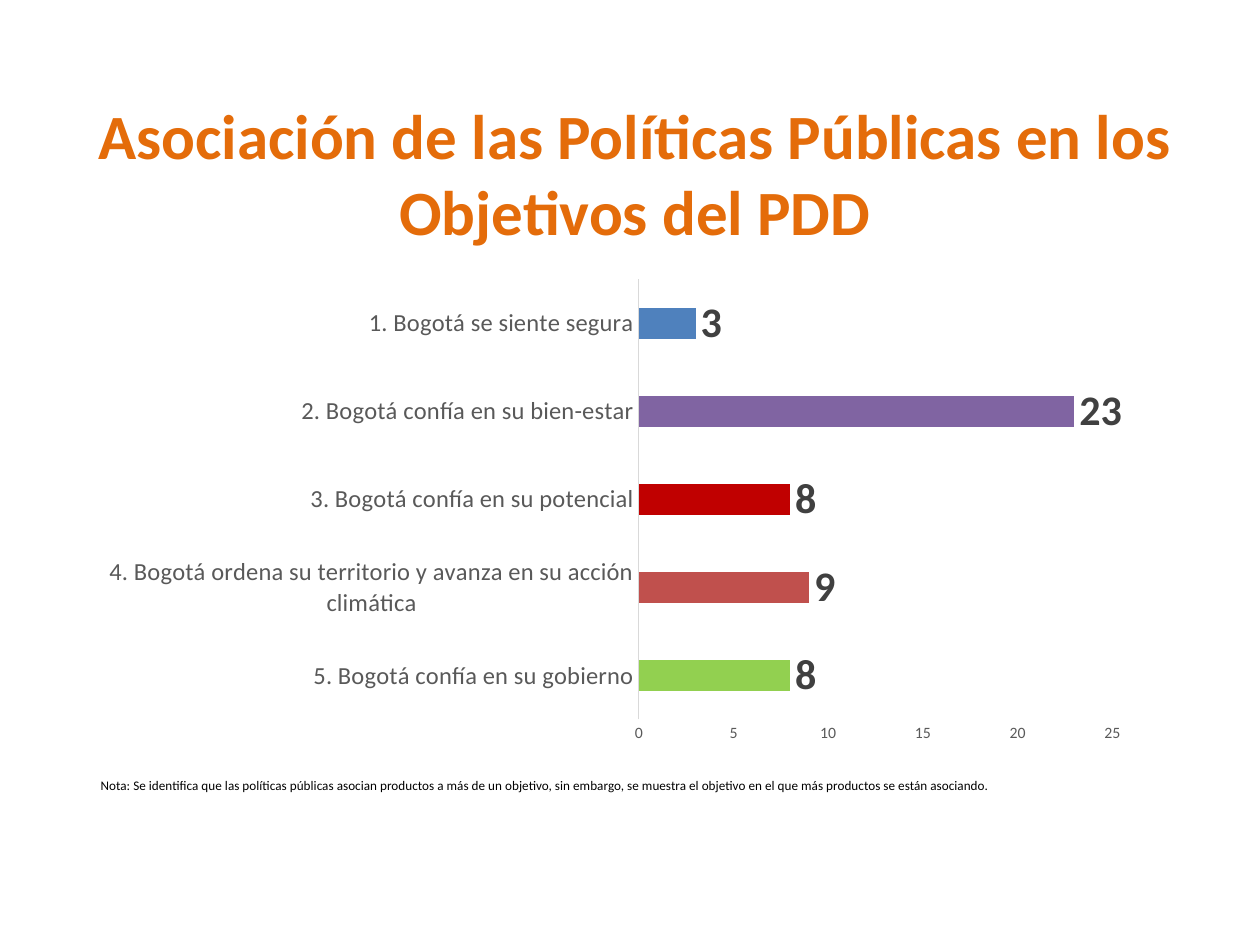
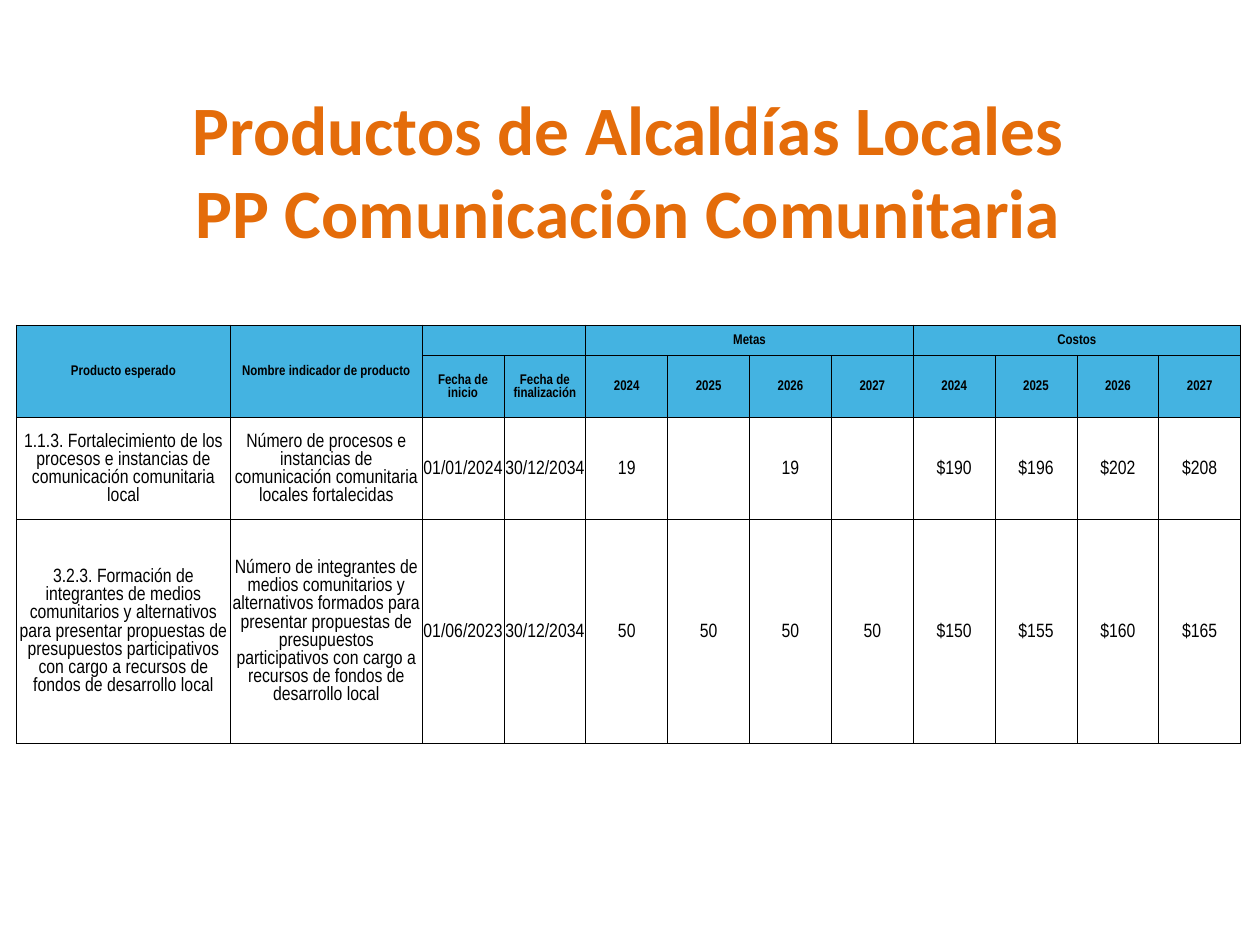
from lxml.etree import SubElement
from pptx import Presentation
from pptx.chart.data import CategoryChartData
from pptx.dml.color import RGBColor
from pptx.enum.chart import XL_CHART_TYPE as ChartType, XL_LABEL_POSITION as LabelPosition
from pptx.enum.chart import XL_TICK_MARK as TickMark
from pptx.enum.text import MSO_ANCHOR as Anchor, PP_ALIGN as Align
from pptx.oxml.ns import qn
from pptx.util import Cm, Pt

ORANGE, BLACK, WHITE = "E46C0A", "000000", "FFFFFF"
HEADER_BLUE, GREY, DARK_GREY, AXIS_GREY = "44B3E1", "595959", "404040", "D9D9D9"
HEADING_FONT, TABLE_FONT = "Calibri", "Arial Narrow"


def style(font, name, size, colour, bold=False):
    font.name, font.size, font.bold = name, Pt(size), bold
    font.color.rgb = RGBColor.from_string(colour)


def add_text(slide, left, top, width, height, lines, size, colour, bold, align, anchor):
    frame = slide.shapes.add_textbox(Cm(left), Cm(top), Cm(width), Cm(height)).text_frame
    frame.word_wrap = True
    frame.vertical_anchor = anchor
    paragraph = frame.paragraphs[0]
    paragraph.alignment = align
    for number, line in enumerate(lines):
        if number:
            paragraph.add_line_break()
        run = paragraph.add_run()
        run.text = line
        style(run.font, HEADING_FONT, size, colour, bold)


prs = Presentation()
prs.slide_width, prs.slide_height = Cm(25.4), Cm(19.05)
blank = prs.slide_layouts[6]
title_look = (ORANGE, True, Align.CENTER, Anchor.MIDDLE)

goals_slide = prs.slides.add_slide(blank)
add_text(goals_slide, 1.37, 1.88, 22.86, 3.18,
         ["Asociación de las Políticas Públicas en los Objetivos del PDD"], 36, *title_look)

goals = [
    ("5. Bogotá confía en su gobierno", 8, "92D050"),
    ("4. Bogotá ordena su territorio y avanza en su acción climática", 9, "C0504D"),
    ("3. Bogotá confía en su potencial", 8, "C00000"),
    ("2. Bogotá confía en su bien-estar", 23, "8064A2"),
    ("1. Bogotá se siente segura", 3, "4F81BD"),
]
goal_data = CategoryChartData()
goal_data.categories = [goal for goal, count, colour in goals]
goal_data.add_series("Series 1", [count for goal, count, colour in goals])
chart = goals_slide.shapes.add_chart(
    ChartType.BAR_CLUSTERED, Cm(1.78), Cm(5.44), Cm(21.23), Cm(9.73), goal_data).chart
chart.has_legend = False
chart.has_title = False
style(chart.font, HEADING_FONT, 10, BLACK)

for axis, size in ((chart.category_axis, 14), (chart.value_axis, 9)):
    axis.has_major_gridlines = False
    axis.major_tick_mark = axis.minor_tick_mark = TickMark.NONE
    style(axis.tick_labels.font, HEADING_FONT, size, GREY)
chart.category_axis.format.line.color.rgb = RGBColor.from_string(AXIS_GREY)
chart.category_axis.format.line.width = Pt(0.75)
chart.value_axis.format.line.fill.background()
chart.value_axis.minimum_scale, chart.value_axis.maximum_scale = 0, 25
chart.value_axis.major_unit = 5

plot = chart.plots[0]
plot.gap_width = 182
plot.vary_by_categories = False
for index, (goal, count, colour) in enumerate(goals):
    fill = plot.series[0].points[index].format.fill
    fill.solid()
    fill.fore_color.rgb = RGBColor.from_string(colour)
plot.has_data_labels = True
plot.data_labels.show_value = True
plot.data_labels.position = LabelPosition.OUTSIDE_END
style(plot.data_labels.font, HEADING_FONT, 24, DARK_GREY, True)

add_text(goals_slide, 1.78, 15.54, 20.88, 0.58,
         ["Nota: Se identifica que las políticas públicas asocian productos a más de un objetivo, "
          "sin embargo, se muestra el objetivo en el que más productos se están asociando."],
         7.5, BLACK, False, Align.LEFT, Anchor.TOP)

products_slide = prs.slides.add_slide(blank)
add_text(products_slide, 0.89, 1.83, 23.55, 3.18,
         ["Productos de Alcaldías Locales", "PP Comunicación Comunitaria"], 39.6, *title_look)

years = ["2024", "2025", "2026", "2027"]
product_rows = [
    ["Producto esperado", "Nombre indicador de producto", "", "",
     "Metas", "", "", "", "Costos", "", "", ""],
    ["", "", "Fecha de inicio", "Fecha de finalización", *years, *years],
    ["1.1.3. Fortalecimiento de los procesos e instancias de comunicación comunitaria local",
     "Número de procesos e instancias de comunicación comunitaria locales fortalecidas",
     "01/01/2024", "30/12/2034", "19", "", "19", "", "$190", "$196", "$202", "$208"],
    ["3.2.3. Formación de integrantes de medios comunitarios y alternativos para presentar "
     "propuestas de presupuestos participativos con cargo a recursos de fondos de desarrollo local",
     "Número de integrantes de medios comunitarios y alternativos formados para presentar "
     "propuestas de presupuestos participativos con cargo a recursos de fondos de desarrollo local",
     "01/06/2023", "30/12/2034", "50", "50", "50", "50", "$150", "$155", "$160", "$165"],
]
column_widths = [4.32, 3.86] + [1.65] * 10
row_heights = [0.62, 1.25, 2.06, 4.5]
products = products_slide.shapes.add_table(
    len(row_heights), len(column_widths), Cm(0.33), Cm(6.55),
    Cm(sum(column_widths)), Cm(sum(row_heights))).table
products.first_row = products.horz_banding = False
for column, width in zip(products.columns, column_widths):
    column.width = Cm(width)
for row, height in zip(products.rows, row_heights):
    row.height = Cm(height)

for row_index, texts in enumerate(product_rows):
    is_header = row_index < 2
    size = 8 if is_header else 11
    for column_index, text in enumerate(texts):
        cell = products.cell(row_index, column_index)
        cell.margin_left = cell.margin_right = cell.margin_top = Cm(0.02)
        cell.margin_bottom = 0
        cell.vertical_anchor = Anchor.MIDDLE
        paragraph = cell.text_frame.paragraphs[0]
        paragraph.alignment = Align.CENTER
        if text:
            run = paragraph.add_run()
            run.text = text
            style(run.font, TABLE_FONT, size, BLACK, is_header)
        else:
            SubElement(paragraph._p, qn("a:endParaRPr"), sz=str(size * 100))
        properties = cell._tc.get_or_add_tcPr()
        for side in ("a:lnL", "a:lnR", "a:lnT", "a:lnB"):
            border = SubElement(properties, qn(side), w=str(Pt(0.5)))
            SubElement(SubElement(border, qn("a:solidFill")), qn("a:srgbClr"), val=BLACK)
        cell.fill.solid()
        cell.fill.fore_color.rgb = RGBColor.from_string(HEADER_BLUE if is_header else WHITE)

for top, left, bottom, right in ((0, 0, 1, 0), (0, 1, 1, 1), (0, 2, 0, 3), (0, 4, 0, 7), (0, 8, 0, 11)):
    products.cell(top, left).merge(products.cell(bottom, right))

prs.save("out.pptx")
